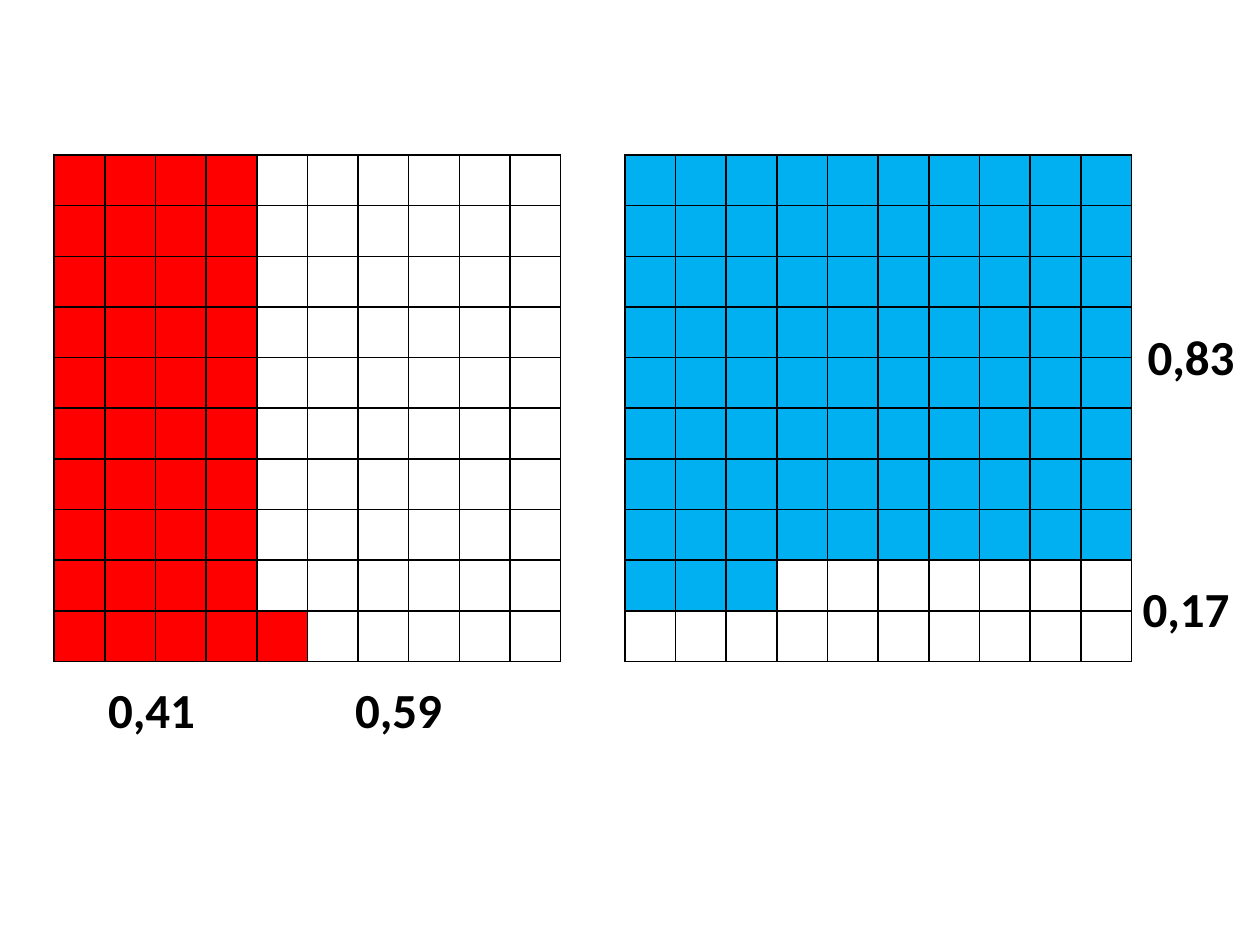
from lxml import etree
from pptx import Presentation
from pptx import util as u
from pptx.dml.color import RGBColor
from pptx.enum import text
from pptx.oxml import ns

RED = RGBColor(0xFF, 0x00, 0x00)
BLUE = RGBColor(0x00, 0xB0, 0xF0)
WHITE = RGBColor(0xFF, 0xFF, 0xFF)
BLACK = RGBColor(0x00, 0x00, 0x00)

COUNT = 10
SIDE = 4.02
TOP = 1.23


def write(frame, words, font="Calibri", size=28, color=BLACK, bold=True):
    run = frame.paragraphs[0].add_run()
    run.text = words
    run.font.name = font
    run.font.size = u.Pt(size)
    run.font.color.rgb = color
    run.font.bold = bold


def border(cell, color=BLACK, width=1):
    props = cell._tc.get_or_add_tcPr()
    for side in ("lnL", "lnR", "lnT", "lnB"):
        line = etree.SubElement(props, ns.qn(f"a:{side}"), w=str(u.Pt(width)))
        fill = etree.SubElement(line, ns.qn("a:solidFill"))
        etree.SubElement(fill, ns.qn("a:srgbClr"), val=str(color))


class Board:
    """Draws square grids and number labels on one slide."""

    def __init__(self, slide):
        self.slide = slide

    def grid(self, left, color, filled):
        """Add a square grid; filled(row, col) tells which cells take the colour."""
        side = u.Inches(SIDE)
        table = self.slide.shapes.add_table(
            COUNT, COUNT, u.Inches(left), u.Inches(TOP), side, side).table
        table.first_row = table.horz_banding = False
        for line in table.rows:
            line.height = u.Inches(SIDE / COUNT)
        for row in range(COUNT):
            for col in range(COUNT):
                cell = table.cell(row, col)
                cell.margin_top = cell.margin_bottom = 0
                border(cell)
                cell.fill.solid()
                cell.fill.fore_color.rgb = color if filled(row, col) else WHITE

    def label(self, words, left, top):
        box = self.slide.shapes.add_textbox(
            u.Inches(left), u.Inches(top), u.Inches(0.9), u.Inches(0.57))
        frame = box.text_frame
        frame.word_wrap = False
        frame.auto_size = text.MSO_AUTO_SIZE.SHAPE_TO_FIT_TEXT
        write(frame, words)


def main():
    deck = Presentation()
    deck.slide_width, deck.slide_height = u.Inches(10), u.Inches(7.5)
    board = Board(deck.slides.add_slide(deck.slide_layouts[6]))

    # Red fills 41 cells by column from the left, blue fills 83 by row.
    board.grid(0.43, RED, lambda row, col: col * COUNT + COUNT - 1 - row < 41)
    board.grid(4.96, BLUE, lambda row, col: row * COUNT + col < 83)

    board.label("0,41", 0.76, 5.34)
    board.label("0,17", 8.97, 4.54)
    board.label("0,59", 2.72, 5.34)
    board.label("0,83", 9.01, 2.54)
    deck.save("out.pptx")


if __name__ == "__main__":
    main()
